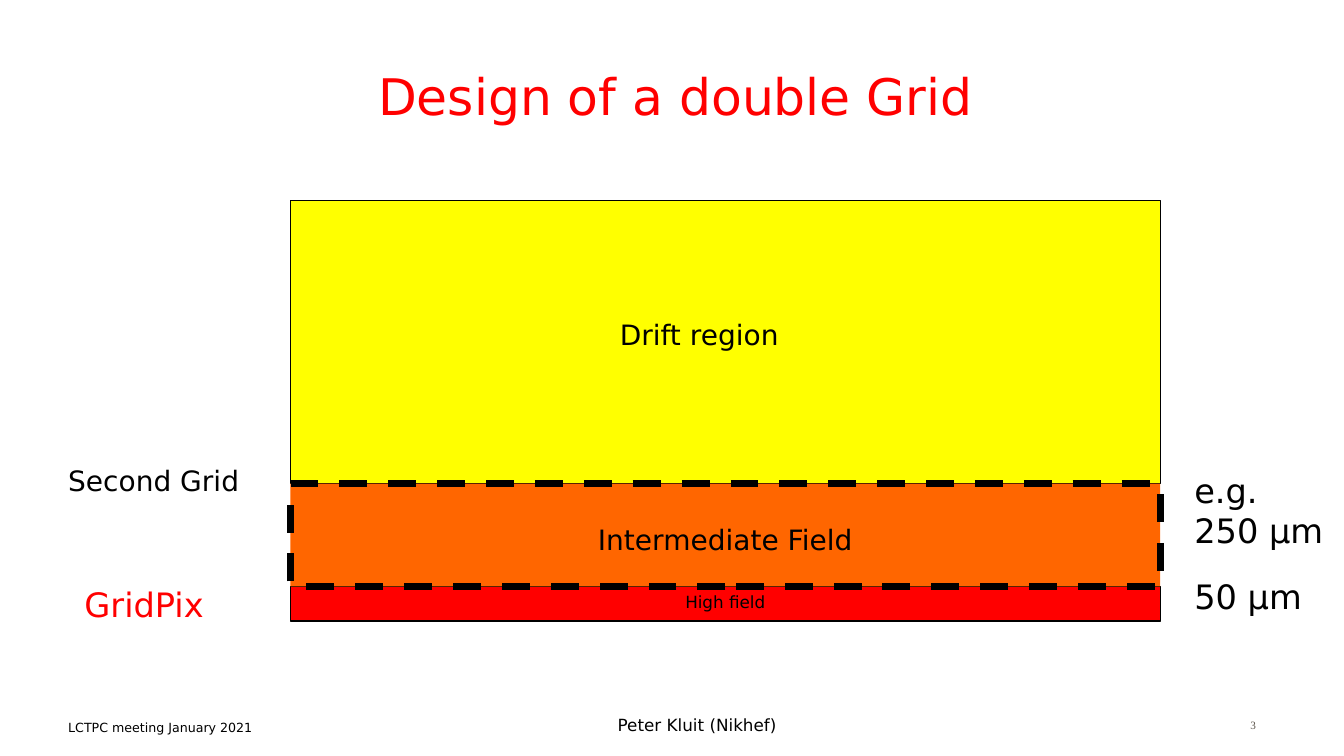
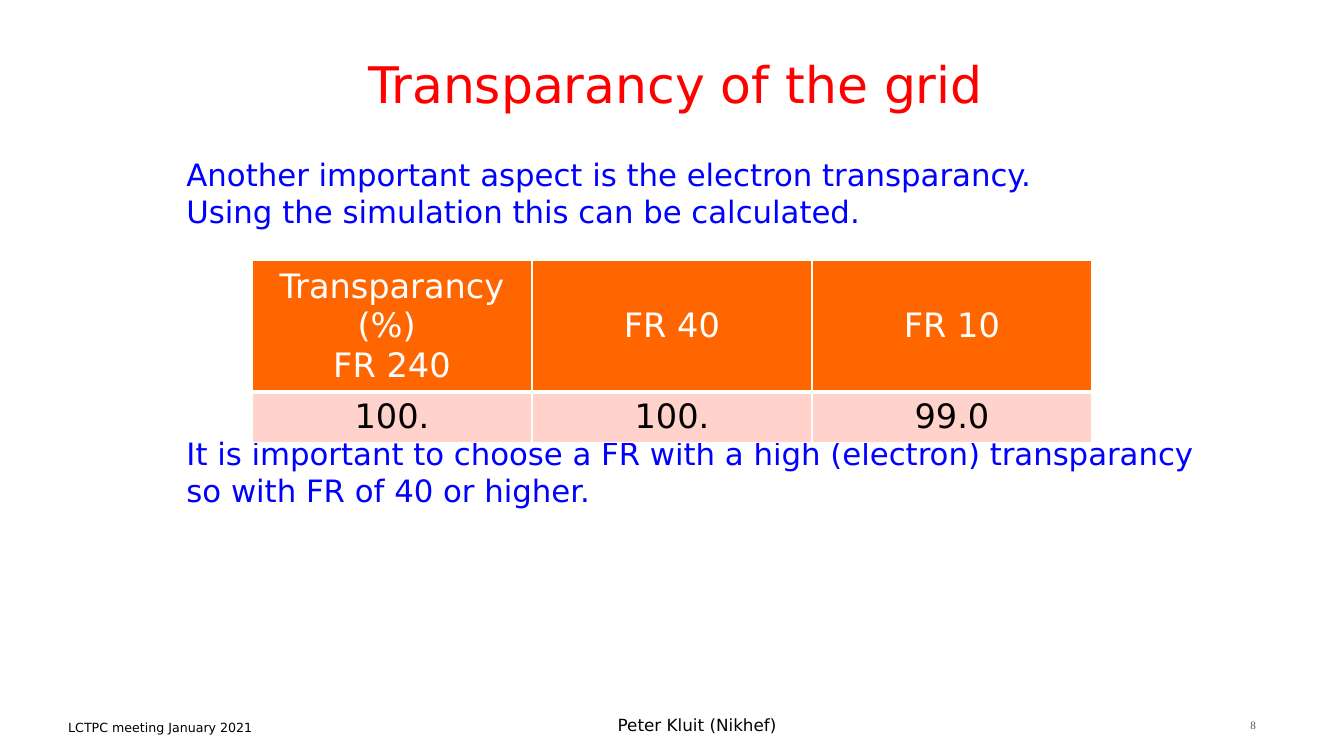
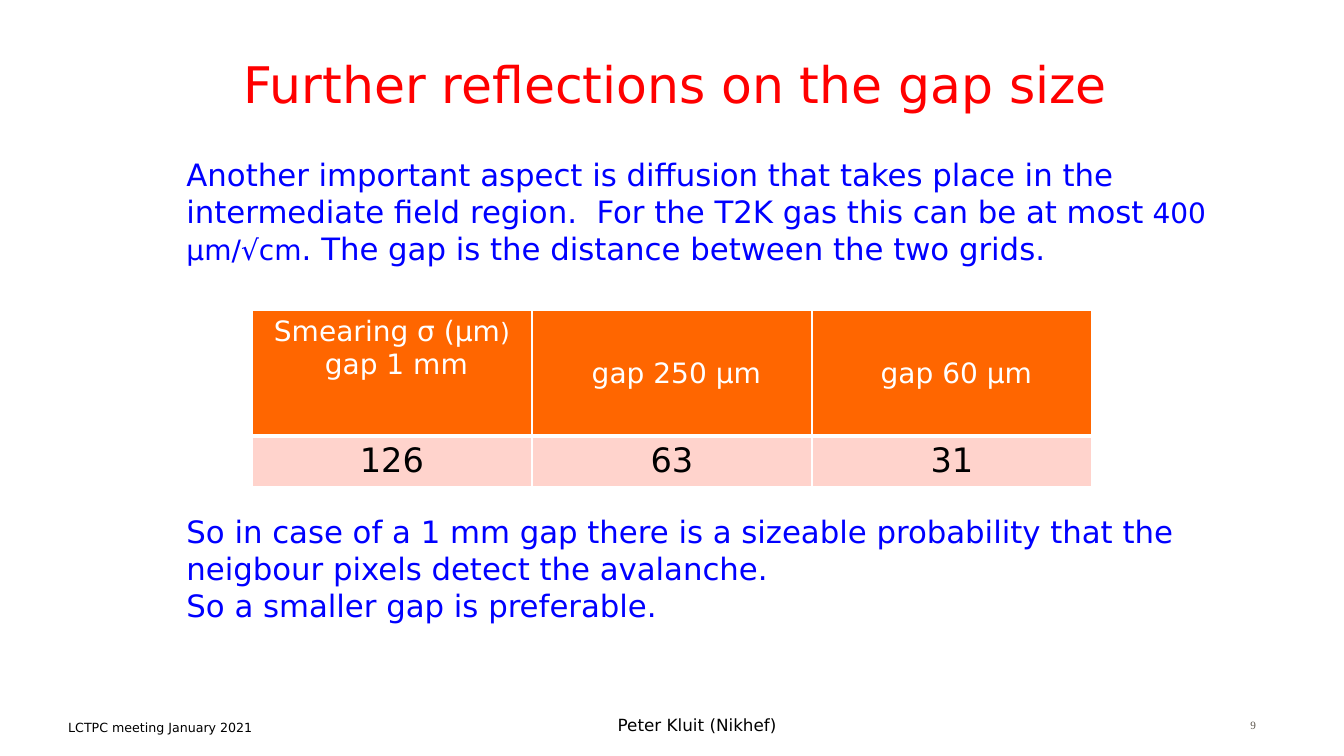
from lxml import etree
from pptx import Presentation
from pptx.dml.color import RGBColor
from pptx.enum.dml import MSO_LINE
from pptx.enum.shapes import MSO_SHAPE
from pptx.enum.text import MSO_ANCHOR, PP_ALIGN
from pptx.oxml.ns import qn
from pptx.util import Cm, Pt

LEFT, CENTER, RIGHT = PP_ALIGN.LEFT, PP_ALIGN.CENTER, PP_ALIGN.RIGHT
TOP, MIDDLE, BOTTOM = MSO_ANCHOR.TOP, MSO_ANCHOR.MIDDLE, MSO_ANCHOR.BOTTOM
RECTANGLE, DASH = MSO_SHAPE.RECTANGLE, MSO_LINE.DASH

# Shared style
SANS, SERIF = "DejaVu Sans", "Times New Roman"
BLACK, WHITE, RED, BLUE = "000000", "FFFFFF", "FF0000", "0000FF"
YELLOW, ORANGE, PINK, GREY = "FFFF00", "FF6600", "FFD3CC", "5E574E"
BODY_LEFT, BODY_WIDTH, BODY_SIZE = 4.45, 27.3, 22
TABLE_LEFT, TABLE_WIDTH, VALUE_HEIGHT = 6.35, 21.17, 1.28

# Grid design: layers from top to bottom (cm), fill, line width, dash, label, size, label offset
STACK_LEFT, STACK_TOP, STACK_WIDTH = 7.32, 5.06, 21.92
LAYERS = [
    (7.13, YELLOW, 1, None, None, 20, 0),
    (2.59, ORANGE, 5, DASH, "Intermediate Field", 20, 0.98),
    (0.87, RED, 1, None, "High field", 12, 0.13),
]
DRAWING_ORDER = (0, 2, 1)  # the dashed layer lies over its neighbours

# Labels: left, top, width, height, paragraphs, size, colour
LABELS = [
    (15.37, 7.87, 5.03, 1.14, ["Drift region"], 20, BLACK),
    (1.47, 11.56, 5.03, 1.14, ["Second Grid"], 20, BLACK),
    (1.88, 14.58, 5.44, 1.32, ["GridPix"], 24, RED),
    (29.85, 14.38, 3.9, 1.27, ["50 μm"], 24, BLACK),
    (29.85, 11.72, 3.9, 2.3, ["e.g.", "250 μm"], 24, BLACK),
]

# A paragraph is a string, or a list of (text, size) runs
TABLE_SLIDES = [
    {
        "number": "8",
        "title": "Transparancy of the grid",
        "texts": [
            (3.81, 2.1, ["Another important aspect is the electron transparancy.",
                         "Using the simulation this can be calculated."]),
            (10.84, 2.1, ["It is important to choose a FR with a high (electron) transparancy",
                          "so with FR of 40 or higher."]),
        ],
        "table_top": 6.57,
        "header_height": 3.27,
        "header_size": 24,
        "first_anchor": MIDDLE,
        "header": [["Transparancy (%) ", "FR 240"], ["FR 40"], ["FR 10"]],
        "values": ["100.", "100.", "99.0"],
    },
    {
        "number": "9",
        "title": "Further reflections on the gap size",
        "texts": [
            (3.81, 3.1, ["Another important aspect is diffusion that takes place in the",
                         [("intermediate field region.  For the T2K gas this can be at most", 22),
                          (" 400 μm/√cm", 20),
                          (". The gap is the distance between the two grids.", 22)]]),
            (12.8, 3.1, ["So in case of a 1 mm gap there is a sizeable probability that the",
                         "neigbour pixels detect the avalanche.",
                         "So a smaller gap is preferable."]),
        ],
        "table_top": 7.83,
        "header_height": 3.15,
        "header_size": 20,
        "first_anchor": TOP,
        "header": [[[("Smearing σ (μm", 20), (")", 18)], " gap 1 mm"],
                   [" gap 250 μm"], [" gap 60 μm"]],
        "values": ["126", "63", "31"],
    },
]


def rgb(color):
    return RGBColor.from_string(color)


def write(frame, paragraphs, size, color, align=LEFT, font=SANS):
    for index, content in enumerate(paragraphs):
        paragraph = frame.add_paragraph() if index else frame.paragraphs[0]
        paragraph.alignment = align
        paragraph.font.name = font
        paragraph.font.size = Pt(size)
        paragraph.font.bold = False
        paragraph.font.color.rgb = rgb(color)
        if isinstance(content, str):
            paragraph.add_run().text = content
            continue
        for text, run_size in content:
            run = paragraph.add_run()
            run.text = text
            run.font.size = Pt(run_size)


def add_text(slide, left, top, width, height, paragraphs, size, color,
             align=LEFT, anchor=TOP, font=SANS):
    box = slide.shapes.add_textbox(Cm(left), Cm(top), Cm(width), Cm(height))
    box.text_frame.word_wrap = True
    box.text_frame.vertical_anchor = anchor
    write(box.text_frame, paragraphs, size, color, align, font)


def add_slide(presentation, title, number, title_top=0.74):
    """Blank slide with the common title and footer."""
    slide = presentation.slides.add_slide(presentation.slide_layouts[6])
    add_text(slide, 12.07, 17.53, 11, 1.12, ["Peter Kluit (Nikhef)"], 12, BLACK, CENTER, BOTTOM)
    add_text(slide, 24.84, 17.3, 7.06, 1.27, [number], 8, GREY, RIGHT, BOTTOM, SERIF)
    add_text(slide, 1.47, 17.96, 13.64, 0.68, ["LCTPC meeting January 2021"], 9, BLACK,
             anchor=BOTTOM)
    add_text(slide, 2.64, title_top, 28.78, 2.24, [title], 36, RED, CENTER, BOTTOM)
    return slide


def add_layer(slide, top, layer):
    height, fill, line_width, dash, label, size, offset = layer
    shape = slide.shapes.add_shape(RECTANGLE, Cm(STACK_LEFT), Cm(top),
                                   Cm(STACK_WIDTH), Cm(height))
    shape.shadow.inherit = False
    shape.fill.solid()
    shape.fill.fore_color.rgb = rgb(fill)
    shape.line.color.rgb = rgb(BLACK)
    shape.line.width = Pt(line_width)
    if dash:
        shape.line.dash_style = dash
    if label:
        frame = shape.text_frame
        frame.vertical_anchor = TOP
        frame.margin_top = Cm(offset)
        frame.margin_bottom = 0
        write(frame, [label], size, BLACK, CENTER)


def set_borders(cell, widths):
    """White borders; widths in points for left, right, top, bottom."""
    properties = cell._tc.get_or_add_tcPr()
    for index, (side, width) in enumerate(zip(("lnL", "lnR", "lnT", "lnB"), widths)):
        line = etree.Element(qn("a:" + side), w=str(Pt(width)))
        fill = etree.SubElement(line, qn("a:solidFill"))
        etree.SubElement(fill, qn("a:srgbClr"), val=WHITE)
        properties.insert(index, line)


def fill_cell(cell, paragraphs, size, color, fill, anchor, widths):
    cell.fill.solid()
    cell.fill.fore_color.rgb = rgb(fill)
    cell.vertical_anchor = anchor
    write(cell.text_frame, paragraphs, size, color, CENTER)
    set_borders(cell, widths)


def add_result_table(slide, content):
    count = len(content["values"])
    heights = (content["header_height"], VALUE_HEIGHT)
    table = slide.shapes.add_table(2, count, Cm(TABLE_LEFT), Cm(content["table_top"]),
                                   Cm(TABLE_WIDTH), Cm(sum(heights))).table
    for row, height in zip(table.rows, heights):
        row.height = Cm(height)
    for index in range(count):
        table.columns[index].width = Cm(TABLE_WIDTH / count)
        anchor = MIDDLE if index else content["first_anchor"]
        fill_cell(table.cell(0, index), content["header"][index], content["header_size"],
                  WHITE, ORANGE, anchor, (1, 1, 1, 3))
        fill_cell(table.cell(1, index), [content["values"][index]], 24,
                  BLACK, PINK, TOP, (1, 1, 3, 1))


def build_design(presentation):
    slide = add_slide(presentation, "Design of a double Grid", "3", 1.04)
    tops = [STACK_TOP + sum(layer[0] for layer in LAYERS[:index])
            for index in range(len(LAYERS))]
    for index in DRAWING_ORDER:
        add_layer(slide, tops[index], LAYERS[index])
    for label in LABELS:
        add_text(slide, *label)


def build_table_slide(presentation, content):
    slide = add_slide(presentation, content["title"], content["number"])
    for top, height, paragraphs in content["texts"]:
        add_text(slide, BODY_LEFT, top, BODY_WIDTH, height, paragraphs, BODY_SIZE, BLUE)
    add_result_table(slide, content)


def main():
    presentation = Presentation()
    presentation.slide_width = Cm(33.87)
    presentation.slide_height = Cm(19.05)
    build_design(presentation)
    for content in TABLE_SLIDES:
        build_table_slide(presentation, content)
    presentation.save("out.pptx")


if __name__ == "__main__":
    main()
